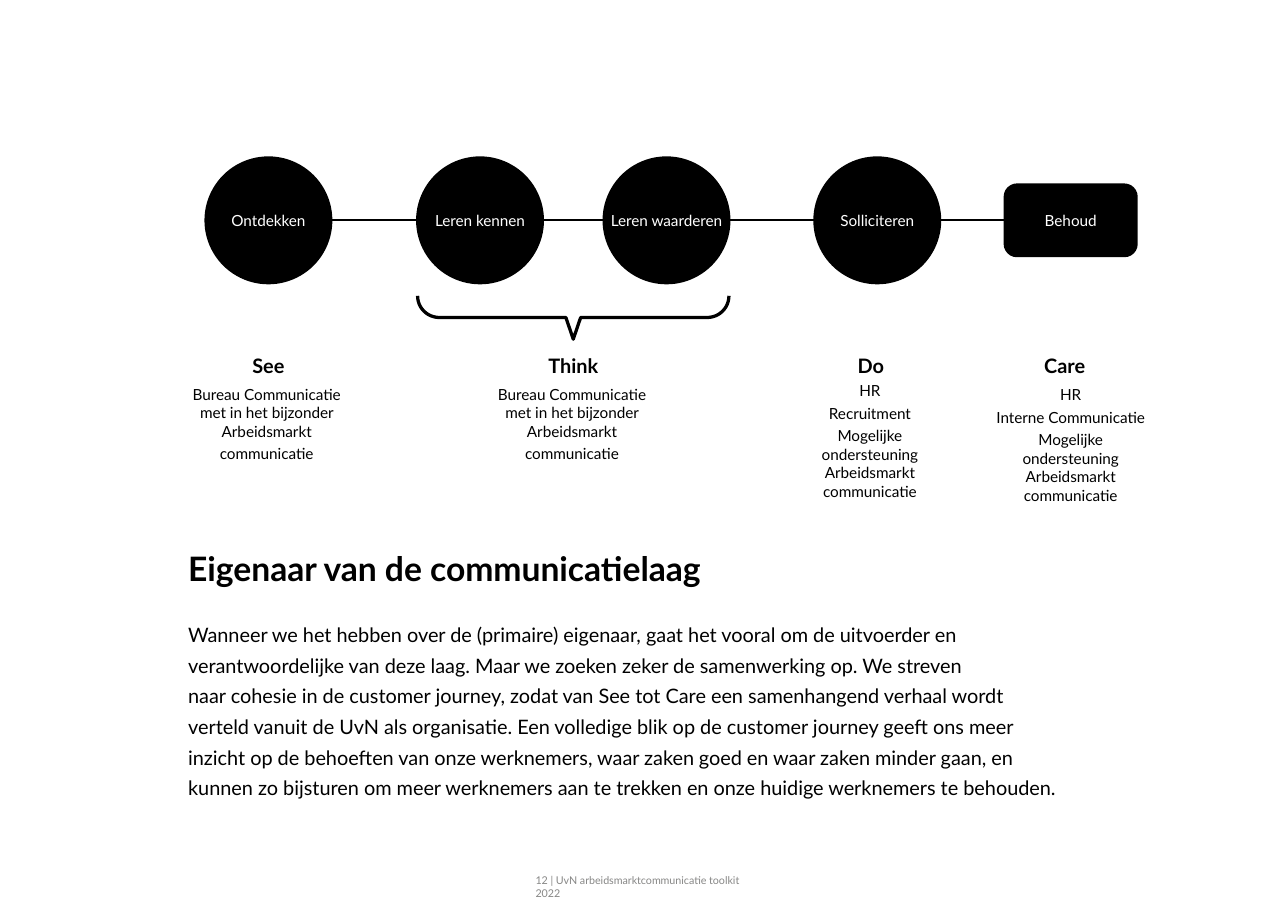
"""Builds the slide on who owns each layer of the recruitment journey."""
from math import cos, pi, sin

from lxml import etree
from pptx import Presentation
from pptx.dml.color import RGBColor
from pptx.enum.shapes import MSO_CONNECTOR, MSO_SHAPE
from pptx.enum.text import MSO_ANCHOR, PP_ALIGN
from pptx.oxml.ns import qn
from pptx.util import Cm, Pt

OVAL, ROUNDED = MSO_SHAPE.OVAL, MSO_SHAPE.ROUNDED_RECTANGLE
STRAIGHT = MSO_CONNECTOR.STRAIGHT
LEFT, CENTER = PP_ALIGN.LEFT, PP_ALIGN.CENTER
TOP, MIDDLE = MSO_ANCHOR.TOP, MSO_ANCHOR.MIDDLE

BLACK, WHITE, GREY = "000000", "FFFFFF", "878786"
HARD_SPACE = chr(160)
AXIS_Y = 5.08
STAGE_SIZE = 2.95
STAGES = [("Ontdekken", 6.19), ("Leren kennen", 11.07),
          ("Leren waarderen", 15.37), ("Solliciteren", 20.23)]
SUPPORT = "Mogelijke ondersteuning Arbeidsmarkt communicatie"
BUREAU = ["Bureau Communicatie met in het bijzonder Arbeidsmarkt", "communicatie"]
LAYERS = [
    ("See", 6.19, BUREAU, 6.15, 8.78),
    ("Think", 13.22, BUREAU, 13.19, 8.78),
    ("Do", 20.08, ["HR", "Recruitment", SUPPORT], 20.06, 8.69),
    ("Care", 24.55, ["HR", "Interne Communicatie", SUPPORT], 24.69, 8.78),
]
HEADING = "Eigenaar van de communicatielaag"
EXPLANATION = (
    "Wanneer we het hebben over de (primaire) eigenaar, gaat het vooral om de "
    "uitvoerder en verantwoordelijke van deze laag. Maar we zoeken zeker de "
    f"samenwerking op. We streven naar{HARD_SPACE}cohesie in de customer journey, "
    f"zodat{HARD_SPACE}van See tot Care een samenhangend verhaal wordt verteld "
    "vanuit de UvN als organisatie. Een volledige blik op de customer journey "
    "geeft ons meer inzicht op de behoeften van onze werknemers, waar "
    f"zaken{HARD_SPACE}goed en waar zaken{HARD_SPACE}minder gaan, en kunnen zo "
    "bijsturen om meer werknemers aan te trekken en onze huidige werknemers te "
    "behouden."
)
FOOTER = "12 | UvN arbeidsmarktcommunicatie toolkit 2022"


def color(hex_code):
    return RGBColor.from_string(hex_code)


def write(frame, text, size=10, ink=BLACK, bold=False, align=LEFT,
          before=0, spacing=1.0):
    first = frame.paragraphs[0]
    paragraph = frame.add_paragraph() if first.runs else first
    paragraph.alignment = align
    paragraph.space_before = Pt(before)
    paragraph.line_spacing = spacing
    run = paragraph.add_run()
    run.text = text
    run.font.name = "Lato"
    run.font.size = Pt(size)
    run.font.bold = bold
    run.font.color.rgb = color(ink)


class JourneySlide:
    def __init__(self, slide, ink=BLACK):
        self.shapes = slide.shapes
        self.ink = ink

    def prepare(self, frame, wrap, anchor=TOP, inset=0):
        frame.word_wrap = wrap
        frame.vertical_anchor = anchor
        frame.margin_left = frame.margin_right = frame.margin_bottom = 0
        frame.margin_top = Cm(inset)
        return frame

    def text_box(self, left, top, width, height, inset=0.03):
        box = self.shapes.add_textbox(Cm(left), Cm(top), Cm(width), Cm(height))
        return self.prepare(box.text_frame, True, inset=inset)

    def stage(self, preset, label, center, width, height, border=0):
        node = self.shapes.add_shape(preset, Cm(center - width / 2),
                                     Cm(AXIS_Y - height / 2), Cm(width), Cm(height))
        node.shadow.inherit = False
        node.fill.solid()
        node.fill.fore_color.rgb = color(self.ink)
        if border:
            node.line.color.rgb = color(self.ink)
            node.line.width = Pt(border)
        else:
            node.line.fill.background()
        frame = self.prepare(node.text_frame, False, MIDDLE)
        write(frame, label, ink=WHITE, align=CENTER)

    def axis(self, start, end):
        line = self.shapes.add_connector(STRAIGHT, Cm(start), Cm(AXIS_Y),
                                         Cm(end), Cm(AXIS_Y))
        line.line.color.rgb = color(self.ink)
        line.line.width = Pt(1.4)
        etree.SubElement(line._element.spPr, qn("a:effectLst"))

    def brace(self, center, top, half_width, radius=0.5, steps=12):
        angles = [pi / 2 * step / steps for step in range(steps + 1)]
        half = [(-half_width + radius * (1 - cos(a)), top + radius * sin(a))
                for a in angles]
        half.append((-0.17, top + radius))
        mirrored = [(-x, y) for x, y in reversed(half)]
        points = [(Cm(center + x), Cm(y))
                  for x, y in half + [(0, top + 2 * radius)] + mirrored]
        builder = self.shapes.build_freeform(*points[0])
        builder.add_line_segments(points[1:], close=False)
        outline = builder.convert_to_shape()
        outline.shadow.inherit = False
        outline.fill.background()
        outline.line.color.rgb = color(self.ink)
        outline.line.width = Pt(2.13)

    def layer(self, name, name_center, owners, owners_center, owners_top):
        title = self.text_box(name_center - 2, 8.06, 4, 0.66, inset=0.1)
        write(title, name, size=13, bold=True, align=CENTER, before=2.8)
        width = 3.71
        listing = self.text_box(owners_center - width / 2, owners_top,
                                width, 2.6, inset=0.1)
        for owner in owners:
            write(listing, owner, align=CENTER, before=2.8)


def main():
    deck = Presentation()
    deck.slide_width, deck.slide_height = Cm(29.7), Cm(21)
    journey = JourneySlide(deck.slides.add_slide(deck.slide_layouts[6]))

    journey.axis(5.03, 24.08)
    for label, center in STAGES:
        journey.stage(OVAL, label, center, STAGE_SIZE, STAGE_SIZE)
    journey.stage(ROUNDED, "Behoud", 24.69, 3.02, 1.63, border=2)
    journey.brace(13.22, 6.82, 3.59)
    for layer in LAYERS:
        journey.layer(*layer)

    story = journey.text_box(4.34, 12.6, 20.17, 5.84)
    write(story, HEADING, size=22, bold=True, before=1)
    write(story, EXPLANATION, size=13, before=18.2, spacing=1.28)
    write(journey.text_box(12.35, 20.12, 5.21, 0.6), FOOTER,
          size=7, ink=GREY, before=0.8)
    deck.save("out.pptx")


if __name__ == "__main__":
    main()
